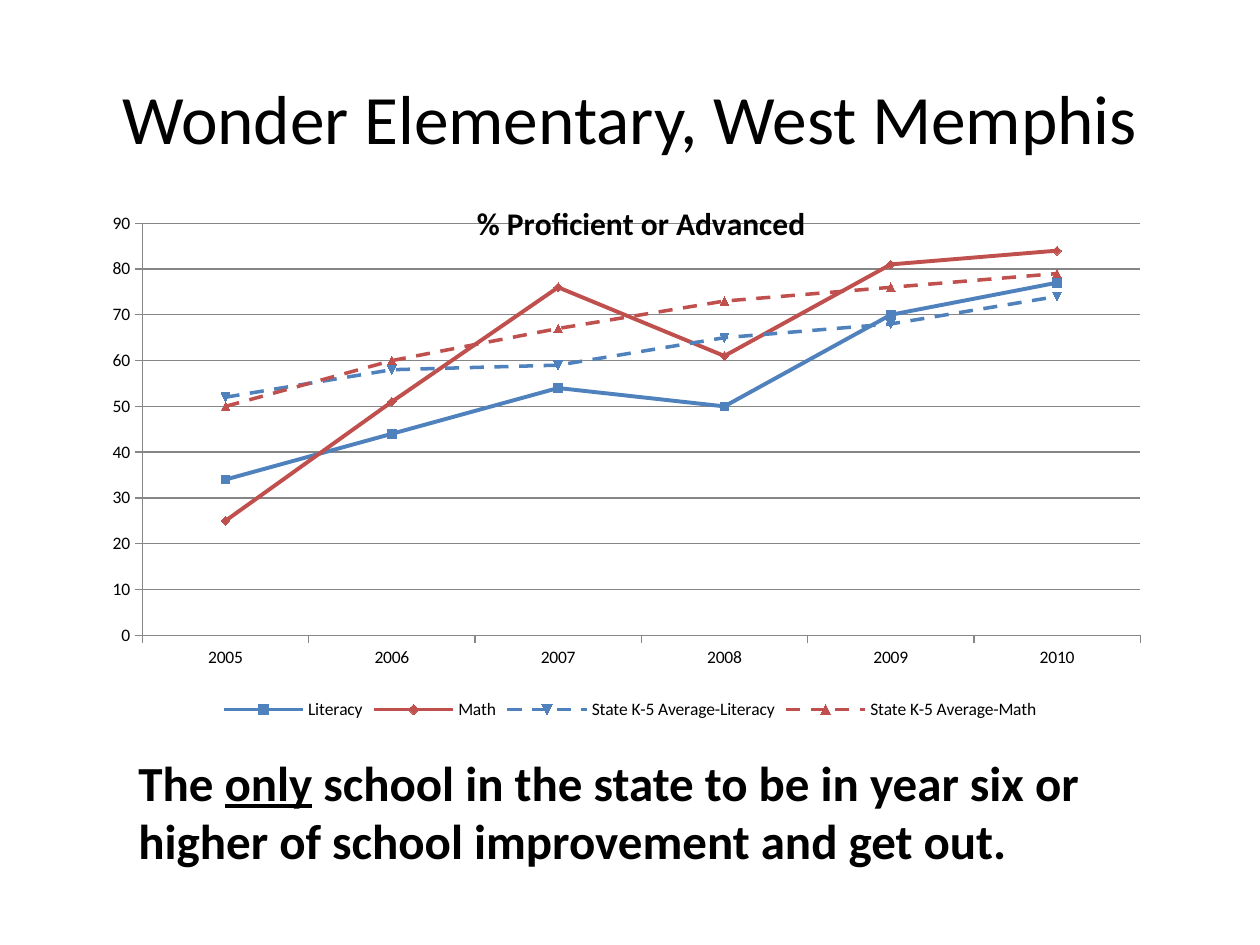
from dataclasses import dataclass

from lxml import etree
from pptx import Presentation
from pptx.chart.data import CategoryChartData
from pptx.dml.color import RGBColor
from pptx.enum.chart import XL_CHART_TYPE, XL_LEGEND_POSITION, XL_TICK_MARK
from pptx.enum.dml import MSO_LINE
from pptx.enum.text import MSO_ANCHOR, PP_ALIGN
from pptx.oxml.ns import qn
from pptx.util import Inches, Pt

LINE_MARKERS = XL_CHART_TYPE.LINE_MARKERS
BOTTOM = XL_LEGEND_POSITION.BOTTOM
OUTSIDE = XL_TICK_MARK.OUTSIDE
DASH, SOLID = MSO_LINE.DASH, MSO_LINE.SOLID

FONT = "Calibri"
BLACK, GRAY, BLUE, RED = "000000", "868686", "4F81BD", "C0504D"
YEARS = ["2005", "2006", "2007", "2008", "2009", "2010"]


@dataclass
class ScoreLine:
    name: str
    scores: list[int]
    color: str
    dash: MSO_LINE = SOLID
    width: float = 2.25


SCORE_LINES = [
    ScoreLine("Literacy", [34, 44, 54, 50, 70, 77], BLUE),
    ScoreLine("Math", [25, 51, 76, 61, 81, 84], RED),
    ScoreLine("State K-5 Average-Literacy", [52, 58, 59, 65, 68, 74], BLUE, DASH, 2),
    ScoreLine("State K-5 Average-Math", [50, 60, 67, 73, 76, 79], RED, DASH, 2),
]


def rgb(color: str) -> RGBColor:
    return RGBColor.from_string(color)


def box(left: float, top: float, width: float, height: float) -> list[int]:
    return [Inches(length) for length in (left, top, width, height)]


def style_font(font, size: float, **formats) -> None:
    for attribute, value in {"name": FONT, "size": Pt(size), **formats}.items():
        setattr(font, attribute, value)
    font.color.rgb = rgb(BLACK)


def style_line(line, color: str, width: float, dash: MSO_LINE = SOLID) -> None:
    line.color.rgb = rgb(color)
    line.width = Pt(width)
    line.dash_style = dash


def set_layout(parent, index: int, settings: dict) -> None:
    """Give a chart part a manual layout as its child at index."""
    for old_layout in parent.findall(qn("c:layout")):
        parent.remove(old_layout)
    layout = etree.Element(qn("c:layout"))
    manual = etree.SubElement(layout, qn("c:manualLayout"))
    for tag, value in settings.items():
        etree.SubElement(manual, qn(f"c:{tag}")).set("val", str(value))
    parent.insert(index, layout)


def add_title(slide) -> None:
    title = slide.shapes.title
    title.left, title.top, title.width, title.height = box(0.5, 0.3, 9, 1.25)
    frame = title.text_frame
    frame.text = "Wonder Elementary, West Memphis"
    frame.vertical_anchor = MSO_ANCHOR.MIDDLE
    frame.paragraphs[0].alignment = PP_ALIGN.CENTER
    style_font(frame.paragraphs[0].runs[0].font, 39.6)


def add_score_chart(slide) -> None:
    data = CategoryChartData()
    data.categories = YEARS
    for score_line in SCORE_LINES:
        data.add_series(score_line.name, score_line.scores)
    chart = slide.shapes.add_chart(LINE_MARKERS, *box(0.5, 1.33, 9, 4.42), data).chart
    style_font(chart.font, 10)

    chart.has_title = True
    heading = chart.chart_title.text_frame
    heading.text = "% Proficient or Advanced"
    style_font(heading.paragraphs[0].runs[0].font, 18, bold=True)

    chart.has_legend = True
    chart.legend.position = BOTTOM
    chart.legend.include_in_layout = False

    scores = chart.value_axis
    scores.minimum_scale, scores.maximum_scale, scores.major_unit = 0, 90, 10
    scores.has_major_gridlines = True
    style_line(scores.major_gridlines.format.line, GRAY, 0.75)
    for axis in (chart.category_axis, scores):
        axis.major_tick_mark = OUTSIDE
        style_line(axis.format.line, GRAY, 0.75)

    chart.plots[0].vary_by_categories = False
    for series, score_line in zip(chart.plots[0].series, SCORE_LINES):
        series.smooth = False
        style_line(series.format.line, score_line.color, score_line.width, score_line.dash)
        series.marker.size = 5
        series.marker.format.fill.solid()
        series.marker.format.fill.fore_color.rgb = rgb(score_line.color)
        style_line(series.marker.format.line, score_line.color, 0.75)

    chart_xml = chart.element.find(qn("c:chart"))
    set_layout(chart_xml.find(qn("c:title")), 1,
               {"xMode": "edge", "yMode": "edge", "x": 0.36, "y": 0.05})
    set_layout(chart_xml.find(qn("c:plotArea")), 0,
               {"layoutTarget": "inner", "xMode": "edge", "yMode": "edge",
                "x": 0.07, "y": 0.1, "w": 0.88, "h": 0.74})


def add_conclusion(slide) -> None:
    frame = slide.shapes.add_textbox(*box(1, 5.92, 8.58, 1.35)).text_frame
    frame.word_wrap = True
    paragraph = frame.paragraphs[0]
    for text, underlined in [
        ("The ", False),
        ("only", True),
        (" school in the state to be in year six or higher"
         " of school improvement and get out.", False),
    ]:
        run = paragraph.add_run()
        run.text = text
        style_font(run.font, 28, bold=True, underline=underlined)


def main() -> None:
    presentation = Presentation()
    presentation.slide_width, presentation.slide_height = Inches(10), Inches(7.5)
    slide = presentation.slides.add_slide(presentation.slide_layouts[5])
    add_title(slide)
    add_score_chart(slide)
    add_conclusion(slide)
    presentation.save("out.pptx")


if __name__ == "__main__":
    main()
